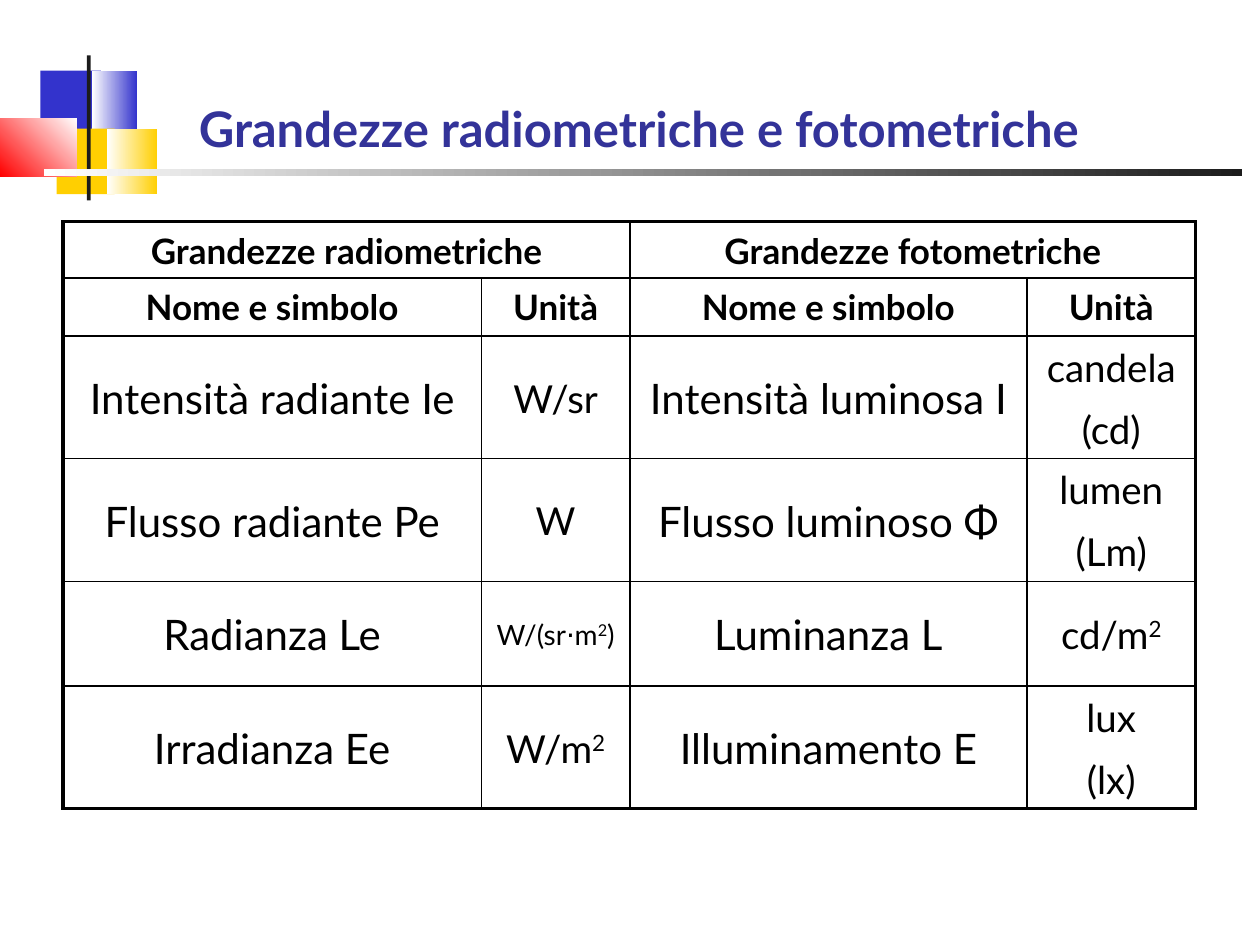
from typing import NamedTuple, Optional

import pptx
import pptx.dml.color
import pptx.enum.shapes
import pptx.enum.text
import pptx.oxml.ns
import pptx.util
from lxml import etree
from pptx.dml.color import RGBColor
from pptx.util import Inches

FONT = "Lato"
BLUE = RGBColor(0x33, 0x33, 0xCC)
TITLE_BLUE = RGBColor(0x33, 0x33, 0x99)
YELLOW = RGBColor(0xFF, 0xCF, 0x01)
RED = RGBColor(0xFF, 0x00, 0x00)
INK = RGBColor(0x1C, 0x1C, 0x1C)
BLACK = RGBColor(0x00, 0x00, 0x00)
WHITE = RGBColor(0xFF, 0xFF, 0xFF)

LINE_SPACING = 1.04
THIN, THICK = 1, 2.25


class Block(NamedTuple):
    left: float
    top: float
    width: float
    height: float
    color: RGBColor
    end_color: Optional[RGBColor] = None
    angle: float = 180


class Entry(NamedTuple):
    text: str  # "^" switches superscript on and off, a line break starts a paragraph
    size: float
    bold: bool = False


def name(text: str) -> Entry:
    return Entry(text, 24)


def unit(text: str, size: float = 22) -> Entry:
    return Entry(text, size)


def heading(text: str) -> Entry:
    return Entry(text, 20, True)


BLOCKS = [
    Block(0.32, 0.56, 0.48, 0.52, BLUE),
    Block(0.73, 0.56, 0.36, 0.52, BLUE, WHITE),
    Block(0.45, 1.02, 0.46, 0.52, YELLOW),
    Block(0.85, 1.02, 0.4, 0.52, YELLOW, WHITE),
    Block(0, 0.94, 0.61, 0.46, WHITE, RED, 225),
    Block(0.69, 0.44, 0.03, 1.15, INK),
    Block(0.35, 1.34, 9.51, 0.06, INK, WHITE),
]

COLUMN_WIDTHS = [3.32, 1.18, 3.15, 1.34]
ROW_HEIGHTS = [0.44, 0.46, 0.97, 0.97, 0.83, 0.97]
HEADER_ROWS = 2
ROWS = [
    [heading("Grandezze radiometriche"), None, heading("Grandezze fotometriche"), None],
    [heading("Nome e simbolo"), heading("Unità")] * 2,
    [name("Intensità radiante Ie"), unit("W/sr"),
     name("Intensità luminosa I"), unit("candela\n(cd)")],
    [name("Flusso radiante Pe"), unit("W"),
     name("Flusso luminoso Φ"), unit("lumen\n(Lm)")],
    [name("Radianza Le"), unit("W/(sr⋅m^2^)", 16),
     name("Luminanza L"), unit("cd/m^2")],
    [name("Irradianza Ee"), unit("W/m^2"),
     name("Illuminamento E"), unit("lux\n(lx)")],
]


def draw_block(slide, block: Block) -> None:
    shape = slide.shapes.add_shape(
        pptx.enum.shapes.MSO_SHAPE.RECTANGLE,
        Inches(block.left), Inches(block.top), Inches(block.width), Inches(block.height))
    shape.shadow.inherit = False
    shape.line.fill.background()
    if block.end_color is None:
        shape.fill.solid()
        shape.fill.fore_color.rgb = block.color
    else:
        shape.fill.gradient()
        shape.fill.gradient_angle = block.angle
        for stop, color in zip(shape.fill.gradient_stops, (block.color, block.end_color)):
            stop.color.rgb = color


def add_spans(para, entry: Entry, text: str, color: RGBColor) -> None:
    para.line_spacing = LINE_SPACING
    for index, part in enumerate(text.split("^")):
        if not part:
            continue
        span = para.add_run()
        span.text = part
        span.font.name = FONT
        span.font.size = pptx.util.Pt(entry.size)
        span.font.bold = entry.bold
        span.font.color.rgb = color
        if index % 2:
            span.font._element.set("baseline", "30000")


def draw_title(slide) -> None:
    box = slide.shapes.add_textbox(Inches(1.48), Inches(0.24), Inches(8.52), Inches(1.06))
    frame = box.text_frame
    frame.word_wrap = True
    frame.vertical_anchor = pptx.enum.text.MSO_ANCHOR.BOTTOM
    title = Entry("Grandezze radiometriche e fotometriche", 28, True)
    add_spans(frame.paragraphs[0], title, title.text, TITLE_BLUE)


def set_borders(cell, row: int, column: int) -> None:
    on_edge = {
        "lnL": column == 0,
        "lnR": column + (cell.span_width if cell.is_merge_origin else 1) >= len(COLUMN_WIDTHS),
        "lnT": row == 0,
        "lnB": row == len(ROWS) - 1,
    }
    properties = cell._tc.get_or_add_tcPr()
    qn = pptx.oxml.ns.qn
    for position, (tag, outer) in enumerate(on_edge.items()):
        line = etree.Element(qn(f"a:{tag}"))
        line.set("w", str(pptx.util.Pt(THICK if outer else THIN)))
        fill = etree.SubElement(line, qn("a:solidFill"))
        etree.SubElement(fill, qn("a:srgbClr")).set("val", str(BLACK))
        properties.insert(position, line)


def fill_cell(cell, entry: Entry, row: int) -> None:
    anchors = pptx.enum.text.MSO_ANCHOR
    cell.vertical_anchor = anchors.TOP if row < HEADER_ROWS else anchors.MIDDLE
    frame = cell.text_frame
    for index, text in enumerate(entry.text.split("\n")):
        para = frame.add_paragraph() if index else frame.paragraphs[0]
        para.alignment = pptx.enum.text.PP_ALIGN.CENTER
        if index:
            para.space_before = pptx.util.Pt(8)
        add_spans(para, entry, text, BLACK)


def draw_table(slide) -> None:
    table = slide.shapes.add_table(
        len(ROWS), len(COLUMN_WIDTHS), Inches(0.5), Inches(1.76),
        Inches(sum(COLUMN_WIDTHS)), Inches(sum(ROW_HEIGHTS))).table
    table.first_row = table.horz_banding = False
    for column, width in zip(table.columns, COLUMN_WIDTHS):
        column.width = Inches(width)
    for row, height in zip(table.rows, ROW_HEIGHTS):
        row.height = Inches(height)
    # Each group heading covers a name column and a unit column
    for left in (0, 2):
        table.cell(0, left).merge(table.cell(0, left + 1))
    for row, entries in enumerate(ROWS):
        for column, entry in enumerate(entries):
            cell = table.cell(row, column)
            cell.fill.background()
            set_borders(cell, row, column)
            if entry is not None:
                fill_cell(cell, entry, row)


def main() -> None:
    deck = pptx.Presentation()
    deck.slide_width, deck.slide_height = Inches(10), Inches(7.5)
    slide = deck.slides.add_slide(deck.slide_layouts[6])
    # Corner ornament and rule
    for block in BLOCKS:
        draw_block(slide, block)
    # Title and comparison table
    draw_title(slide)
    draw_table(slide)
    deck.save("out.pptx")


if __name__ == "__main__":
    main()
